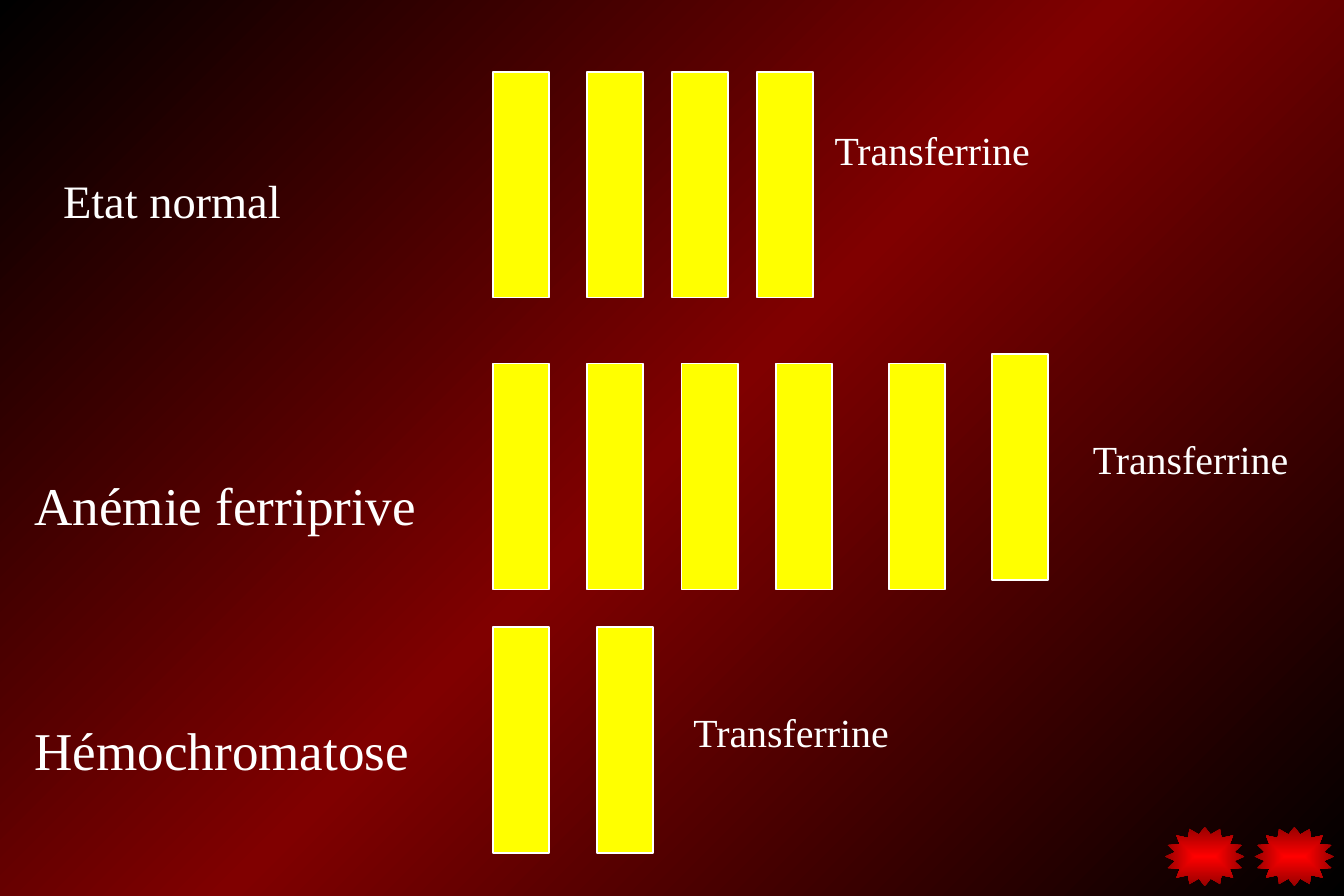
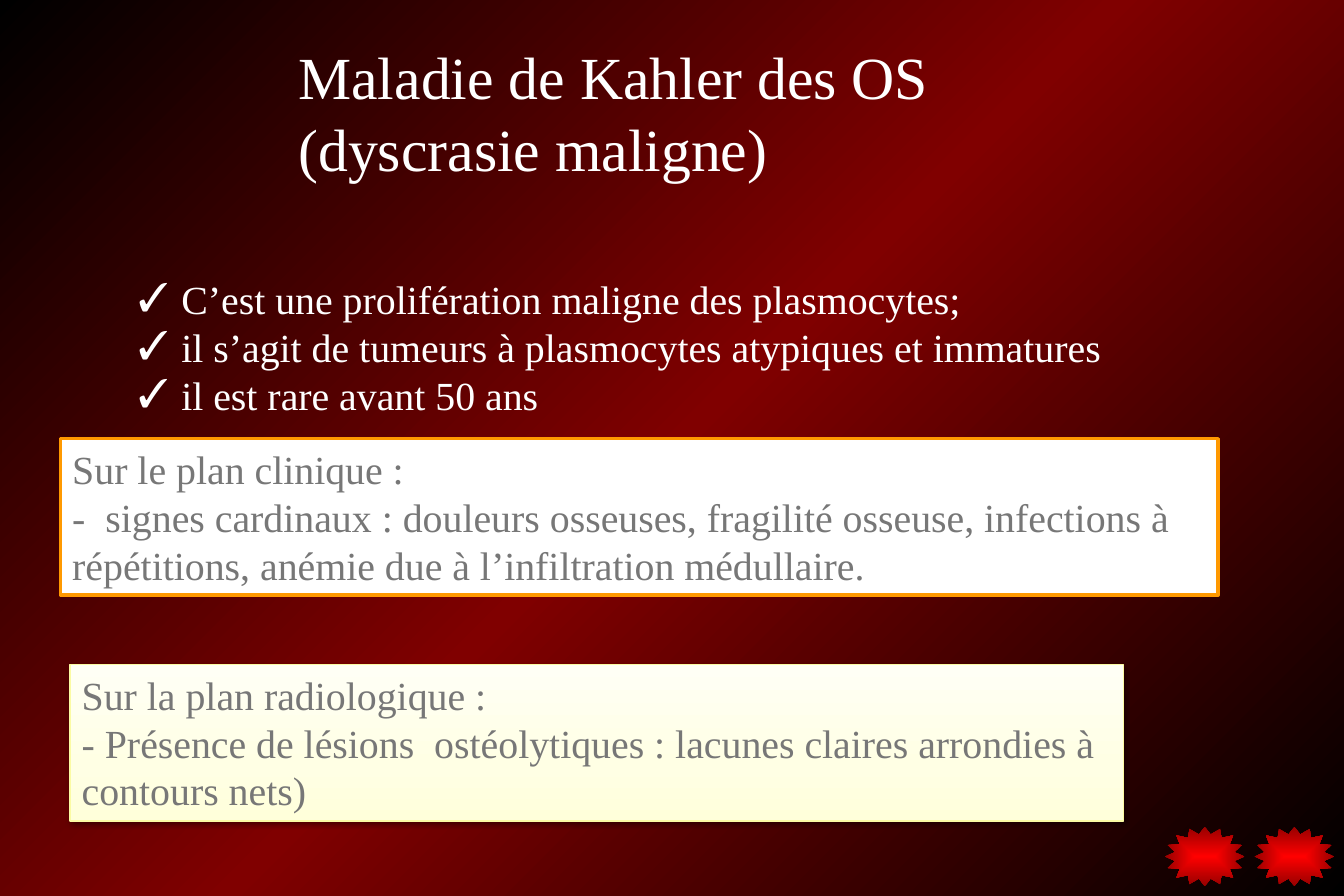
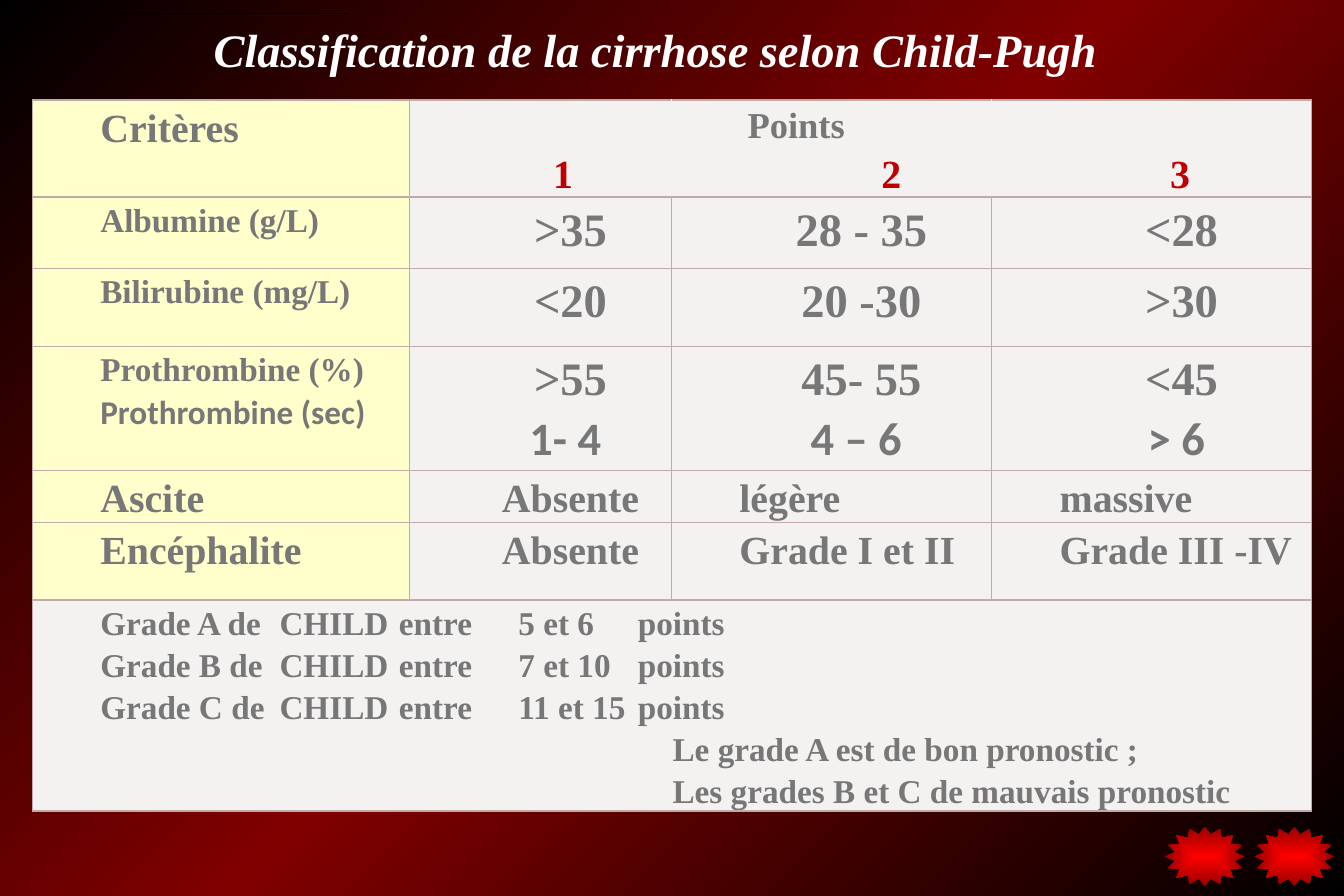
from dataclasses import dataclass
from typing import NamedTuple

from lxml import etree
from pptx import Presentation
from pptx.dml.color import RGBColor
from pptx.enum.shapes import MSO_CONNECTOR, MSO_SHAPE
from pptx.enum.text import MSO_ANCHOR, PP_ALIGN
from pptx.oxml.ns import qn
from pptx.util import Emu, Inches, Pt

RECT = MSO_SHAPE.RECTANGLE
STAR = MSO_SHAPE.STAR_16_POINT
LINE = MSO_CONNECTOR.STRAIGHT
TOP, LOW = MSO_ANCHOR.TOP, MSO_ANCHOR.BOTTOM
LEFT, MID = PP_ALIGN.LEFT, PP_ALIGN.CENTER

# Grid: 90 columns by 60 rows, square units
WIDE, HIGH = Inches(11.25), Inches(7.5)
UNIT = WIDE / 90

SERIF, SANS = "Times New Roman", "Calibri"
WHITE, BLACK, GRAY = "FFFFFF", "000000", "777777"
RED, YELLOW, ORANGE = "C00000", "FFFF00", "FF9900"
CREAM, PALE, ROSE = "FFFFCC", "F4F1F1", "C0AAAA"
BACK = ((0, BLACK), (50, "800000"), (100, BLACK))
GLOW = ((0, "FF0000"), (100, "960000"))
IVORY = ((0, "FFFFDA"), (35, "FFFFE4"), (100, "FFFFF5"))


class Box(NamedTuple):
    x: float
    y: float
    w: float
    h: float


@dataclass
class Run:
    text: str
    size: float = 24
    color: str = WHITE
    font: str = SERIF
    bold: bool = False
    slant: bool = False


@dataclass
class Para:
    runs: list
    align: PP_ALIGN = LEFT
    indent: float = 0
    space: float = 1
    bullet: str = ""
    tabs: tuple = ()


@dataclass
class Group:
    label: str
    size: float
    spot: Box
    top: float
    lefts: tuple
    note: Box
    lift: float = 0


@dataclass
class Cell:
    row: int
    col: int
    paras: list
    span: int = 1
    anchor: MSO_ANCHOR = TOP


# Helpers
def grid(n: float) -> Emu:
    return Emu(round(n * UNIT))


def place(box: Box) -> list:
    return [grid(n) for n in box]


def color(code: str) -> RGBColor:
    return RGBColor.from_string(code)


def node(parent, tag: str, **attrs):
    return etree.SubElement(parent, qn(tag), {k: str(v) for k, v in attrs.items()})


def blend(props, stops: tuple, angle: float | None = None) -> None:
    """Swap a solid fill for a gradient: linear with an angle, else from the centre."""
    solid = props.find(qn("a:solidFill"))
    grad = etree.Element(qn("a:gradFill"), rotWithShape="1")
    items = node(grad, "a:gsLst")
    for pos, code in stops:
        node(node(items, "a:gs", pos=pos * 1000), "a:srgbClr", val=code)
    if angle is None:
        way = node(grad, "a:path", path="shape")
        node(way, "a:fillToRect", l=50000, t=50000, r=50000, b=50000)
    else:
        node(grad, "a:lin", ang=angle * 60000, scaled=0)
    props.replace(solid, grad)


def write(frame, paras: list) -> None:
    frame.word_wrap = True
    for i, item in enumerate(paras):
        para = frame.paragraphs[0] if i == 0 else frame.add_paragraph()
        para.alignment = item.align
        para.line_spacing = item.space
        props = para._p.get_or_add_pPr()
        props.set("marL", str(grid(item.indent)))
        props.set("indent", str(-grid(item.indent) if item.bullet else 0))
        if item.bullet:
            node(props, "a:buFont", typeface=SERIF)
            node(props, "a:buChar", char=item.bullet)
        if item.tabs:
            node(props, "a:buNone")
            stops = node(props, "a:tabLst")
            for tab in item.tabs:
                node(stops, "a:tab", pos=grid(tab), algn="l")
        for part in item.runs:
            run = para.add_run()
            run.text = part.text
            font = run.font
            font.name, font.size = part.font, Pt(part.size)
            font.bold, font.italic = part.bold, part.slant
            font.color.rgb = color(part.color)


def text(slide, box: Box, paras: list) -> None:
    write(slide.shapes.add_textbox(*place(box)).text_frame, paras)


def shape(slide, kind, box: Box, fill: str, edge: str = "", width: float = 1):
    item = slide.shapes.add_shape(kind, *place(box))
    item.shadow.inherit = False
    item.fill.solid()
    item.fill.fore_color.rgb = color(fill)
    if edge:
        item.line.color.rgb = color(edge)
        item.line.width = Pt(width)
    else:
        item.line.fill.background()
    return item


def base(deck):
    """Add a blank slide with the two corner stars."""
    slide = deck.slides.add_slide(deck.slide_layouts[6])
    for x in (84, 78):
        star = shape(slide, STAR, Box(x, 55.36, 5.36, 4), "FF0000")
        blend(star.element.spPr, GLOW)
    return slide


# Slide 1: bars of transferrin by state
GROUPS = (
    Group("Etat normal", 28, Box(3.44, 11.12, 24.56, 4.56), 4.8,
          (33, 39.3, 45, 50.7), Box(55.1, 8, 15.76, 4)),
    Group("Anémie ferriprive", 32, Box(1.52, 31.25, 27.68, 5.12), 24.35,
          (33, 39.3, 45.65, 51.95, 59.52, 66.42), Box(72.4, 28.72, 17.6, 4), 0.64),
    Group("Hémochromatose", 32, Box(1.52, 47.65, 28.64, 5.12), 42,
          (33, 39.97), Box(45.65, 47, 17.6, 4)),
)


def bars(deck) -> None:
    slide = base(deck)
    for group in GROUPS:
        for x in group.lefts:
            y = group.top - (group.lift if x == group.lefts[-1] else 0)
            shape(slide, RECT, Box(x, y, 3.76, 15.12), YELLOW, WHITE)
        text(slide, group.spot, [Para([Run(group.label, group.size)])])
        text(slide, group.note, [Para([Run("Transferrine")])])


# Slide 2: bone disease
HEAD = ("Maladie de Kahler des OS", "(dyscrasie maligne)")
FACTS = (
    "C’est une prolifération maligne des plasmocytes;",
    "il s’agit de tumeurs à plasmocytes atypiques et immatures",
    "il est rare avant 50 ans",
)
CLINIC = (
    "Sur le plan clinique :",
    "-  signes cardinaux : douleurs osseuses, fragilité osseuse, infections à "
    "répétitions, anémie due à l’infiltration médullaire.",
)
SCAN = (
    "Sur la plan radiologique :",
    "- Présence de lésions  ostéolytiques : lacunes claires arrondies à contours nets)",
)


def panel(slide, box: Box, lines: tuple, edge: str, width: float):
    item = shape(slide, RECT, box, WHITE, edge, width)
    item.text_frame.vertical_anchor = TOP
    write(item.text_frame, [Para([Run(line, color=GRAY)]) for line in lines])
    return item


def bone(deck) -> None:
    slide = base(deck)
    text(slide, Box(19.2, 2.28, 62.96, 10.4), [Para([Run(s, 36)]) for s in HEAD])
    text(slide, Box(8.48, 18, 69.92, 10.48),
         [Para([Run(s)], indent=2.88, bullet="✓") for s in FACTS])
    panel(slide, Box(4.05, 29.38, 77.52, 10.48), CLINIC, ORANGE, 2)
    card = panel(slide, Box(4.68, 44.5, 70.56, 10.48), SCAN, "FBFBA4", 0.75)
    props = card.element.spPr
    blend(props, IVORY, 270)
    cast = node(props.find(qn("a:effectLst")), "a:outerShdw", blurRad=Pt(3.1),
                dist=Pt(1.6), dir=90 * 60000, rotWithShape=0)
    node(node(cast, "a:srgbClr", val=BLACK), "a:alpha", val=38000)


# Slide 3: score table
COLS = (25.28, 17.52, 21.44, 21.44)
ROWS = (6.48, 4.8, 5.2, 8.32, 3.48, 5.2, 14.12)
LEAD = {SERIF: 1.27, SANS: 1.35}


def line(words: str, size: float = 24, tone: str = GRAY, font: str = SERIF,
         indent: float = 4, **kw) -> Para:
    run = Run(words, size, tone, font, True)
    return Para([run], indent=indent, space=Pt(size * LEAD[font]), **kw)


def pair(first: str, second: str, size: float, **kw) -> list:
    lines = [line(first, size, **kw)]
    if second:
        lines.append(line(second, size, font=SANS, **kw))
    return lines


SCORES = (
    (("Albumine (g/L)", ""), (">35", ""), ("28 - 35", ""), ("<28", "")),
    (("Bilirubine (mg/L)", ""), ("<20", ""), ("20 -30", ""), (">30", "")),
    (("Prothrombine (%)", "Prothrombine (sec)"), (">55", "1- 4 "),
     ("45- 55", "4 – 6 "), ("<45", "> 6 ")),
)
SIGNS = (
    ("Ascite", "Absente", "légère", "massive"),
    ("Encéphalite", "Absente", "Grade I et II", "Grade III -IV"),
)
GRADES = (("A", "5 et 6"), ("B", "7 et 10"), ("C", "11 et 15"))
ENDS = ("Le grade A est de bon pronostic ;", "Les grades B et C de mauvais pronostic")


def cells() -> list:
    found = [Cell(0, 0, [line("Critères")])]
    for c, indent in enumerate((9.04, 13.5, 11.4), 1):
        paras = [line(str(c), 24, RED, indent=indent)]
        if c == 2:
            paras.insert(0, line("Points", 22, indent=4.55))
        found.append(Cell(0, c, paras, anchor=LOW))
    for r, row in enumerate(SCORES, 1):
        for c, (first, second) in enumerate(row):
            size, align = (28, MID) if c else (20, LEFT)
            found.append(Cell(r, c, pair(first, second, size, align=align)))
    for r, row in enumerate(SIGNS, 4):
        for c, word in enumerate(row):
            found.append(Cell(r, c, [line(word, align=MID if c == 1 else LEFT)]))
    last = [line(f"\tGrade {name} de\tCHILD\tentre\t{score}\tpoints", 20, indent=0,
                 tabs=(4, 16, 24.96, 31.52, 41.52)) for name, score in GRADES]
    last += [line(words, 20, indent=42.32) for words in ENDS]
    return found + [Cell(6, 0, last, 4)]


def border(cell, plain: str) -> None:
    """Rule all sides; the plain ones take the colour of the cell."""
    props = cell._tc.get_or_add_tcPr()
    for i, side in enumerate("LRTB"):
        edge = etree.Element(qn(f"a:ln{side}"), w=str(Pt(1)))
        tone = PALE if side in plain else ROSE
        node(node(edge, "a:solidFill"), "a:srgbClr", val=tone)
        props.insert(i, edge)


def score(deck) -> None:
    slide = base(deck)
    frame = slide.shapes.add_table(
        len(ROWS), len(COLS), *place(Box(2.16, 6.7, sum(COLS), sum(ROWS))))
    table = frame.table
    table.first_row = table.horz_banding = False
    for col, width in zip(table.columns, COLS):
        col.width = grid(width)
    for row, height in zip(table.rows, ROWS):
        row.height = grid(height)
    for r in range(len(ROWS)):
        for c in range(len(COLS)):
            cell = table.cell(r, c)
            cell.fill.solid()
            cell.fill.fore_color.rgb = color(CREAM if c == 0 and r < 6 else PALE)
            cell.margin_left = cell.margin_right = Inches(0.07)
            cell.margin_top = cell.margin_bottom = 0
            border(cell, ("", "R", "LR", "L")[c] if r == 0 else "")
    for item in cells():
        cell = table.cell(item.row, item.col)
        if item.span > 1:
            cell.merge(table.cell(item.row, item.col + item.span - 1))
        cell.vertical_anchor = item.anchor
        write(cell.text_frame, item.paras)

    rule = slide.shapes.add_connector(LINE, *place(Box(8.08, 0.88, 23.28, 0.88)))
    rule.line.color.rgb = color(BLACK)
    rule.line.width = Pt(0.75)
    node(rule.element.spPr, "a:effectLst")
    title = Run("Classification de la cirrhose selon Child-Pugh", 28, bold=True, slant=True)
    text(slide, Box(13.52, 1.04, 66.16, 4.56), [Para([title])])


def main() -> None:
    deck = Presentation()
    deck.slide_width, deck.slide_height = WIDE, HIGH
    # Shared background
    master = deck.slide_master
    master.background.fill.solid()
    blend(master.element.find(f".//{qn('p:bgPr')}"), BACK, 45)
    for build in (bars, bone, score):
        build(deck)
    deck.save("out.pptx")


if __name__ == "__main__":
    main()
